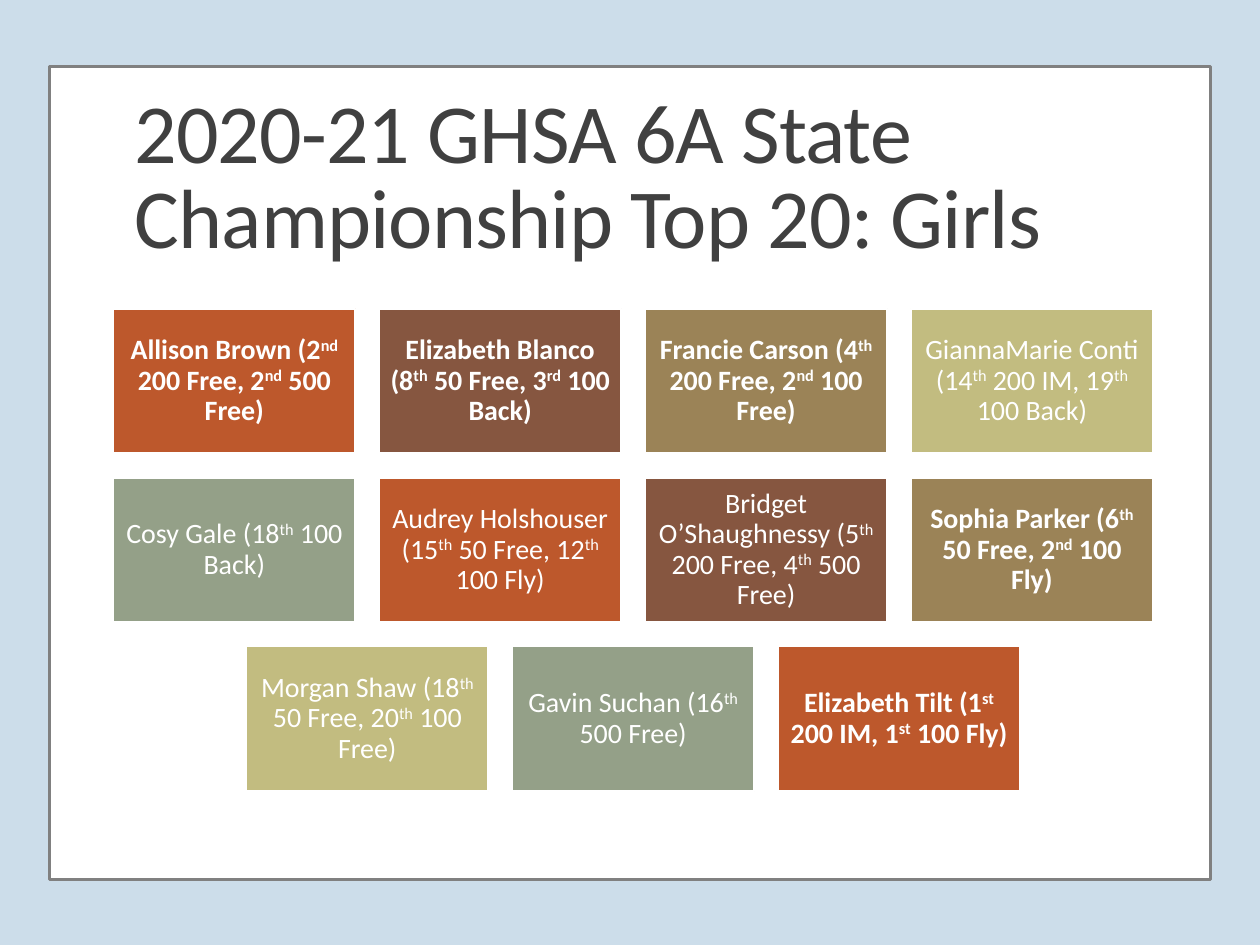
from pptx import Presentation
from pptx.dml.color import RGBColor
from pptx.enum.shapes import MSO_SHAPE
from pptx.enum.text import MSO_ANCHOR, PP_ALIGN
from pptx.util import Inches, Pt

RECTANGLE = MSO_SHAPE.RECTANGLE
MIDDLE, BOTTOM = MSO_ANCHOR.MIDDLE, MSO_ANCHOR.BOTTOM
CENTER = PP_ALIGN.CENTER

TITLE = "2020-21 GHSA 6A State Championship Top 20: Girls"
SWIMMERS = [
    ("Allison Brown (2^nd^ 200 Free, 2^nd^ 500 Free)", True),
    ("Elizabeth Blanco (8^th^ 50 Free, 3^rd^ 100 Back)", True),
    ("Francie Carson (4^th^ 200 Free, 2^nd^ 100 Free)", True),
    ("GiannaMarie Conti (14^th^ 200 IM, 19^th^ 100 Back)", False),
    ("Cosy Gale (18^th^ 100 Back)", False),
    ("Audrey Holshouser (15^th^ 50 Free, 12^th^ 100 Fly)", False),
    ("Bridget O’Shaughnessy (5^th^ 200 Free, 4^th^ 500 Free)", False),
    ("Sophia Parker (6^th^ 50 Free, 2^nd^ 100 Fly)", True),
    ("Morgan Shaw (18^th^ 50 Free, 20^th^ 100 Free)", False),
    ("Gavin Suchan (16^th^ 500 Free)", False),
    ("Elizabeth Tilt (1^st^ 200 IM, 1^st^ 100 Fly)", True),
]

THEME = {
    "font": "Calibri",
    "title_size": 48,
    "card_size": 16,
    "background": "CCDDEA",
    "panel": "FFFFFF",
    "panel_line": "808080",
    "title": "404040",
    "card_text": "FFFFFF",
    "cards": ["BD582C", "865640", "9B8357", "C2BC80", "94A088"],
}

COLUMNS = 4
CARD_WIDTH, CARD_HEIGHT, GAP = 1.92, 1.15, 0.19
GRID_LEFT, GRID_TOP = 0.9, 2.45


def color(name):
    return RGBColor.from_string(name)


def add_rectangle(slide, box, fill, line, line_width):
    shape = slide.shapes.add_shape(RECTANGLE, *map(Inches, box))
    shape.shadow.inherit = False
    shape.fill.solid()
    shape.fill.fore_color.rgb = color(fill)
    shape.line.color.rgb = color(line)
    shape.line.width = Pt(line_width)
    return shape


def style_run(run, size, text_color, bold=False):
    run.font.name = THEME["font"]
    run.font.size = Pt(size)
    run.font.bold = bold
    run.font.color.rgb = color(text_color)


def add_title(slide):
    box = slide.shapes.add_textbox(*map(Inches, (0.97, 0.57, 8.25, 1.59)))
    frame = box.text_frame
    frame.word_wrap = True
    frame.vertical_anchor = BOTTOM
    frame.text = TITLE
    paragraph = frame.paragraphs[0]
    paragraph.line_spacing = 0.85
    run = paragraph.runs[0]
    style_run(run, THEME["title_size"], THEME["title"])
    run.font._element.set("spc", "-50")


def add_card(slide, box, fill, text, bold):
    card = add_rectangle(slide, box, fill, THEME["panel"], 1.25)
    frame = card.text_frame
    frame.word_wrap = True
    frame.vertical_anchor = MIDDLE
    frame.margin_left = frame.margin_right = Inches(0.07)
    frame.margin_top = frame.margin_bottom = Inches(0.07)
    paragraph = frame.paragraphs[0]
    paragraph.alignment = CENTER
    paragraph.line_spacing = 0.9
    for index, part in enumerate(text.split("^")):
        run = paragraph.add_run()
        run.text = part
        style_run(run, THEME["card_size"], THEME["card_text"], bold)
        if index % 2:
            run.font._element.set("baseline", "30000")


def add_cards(slide):
    step = CARD_WIDTH + GAP
    for index, (text, bold) in enumerate(SWIMMERS):
        row, column = divmod(index, COLUMNS)
        row_count = min(COLUMNS, len(SWIMMERS) - row * COLUMNS)
        left = GRID_LEFT + (column + (COLUMNS - row_count) / 2) * step
        top = GRID_TOP + row * (CARD_HEIGHT + GAP)
        fill = THEME["cards"][index % len(THEME["cards"])]
        add_card(slide, (left, top, CARD_WIDTH, CARD_HEIGHT), fill, text, bold)


def main():
    presentation = Presentation()
    presentation.slide_width = Inches(10)
    presentation.slide_height = Inches(7.5)
    slide = presentation.slides.add_slide(presentation.slide_layouts[6])
    slide.background.fill.solid()
    slide.background.fill.fore_color.rgb = color(THEME["background"])
    add_rectangle(slide, (0.39, 0.53, 9.22, 6.45), THEME["panel"], THEME["panel_line"], 1.75)
    add_title(slide)
    add_cards(slide)
    presentation.save("out.pptx")


if __name__ == "__main__":
    main()
